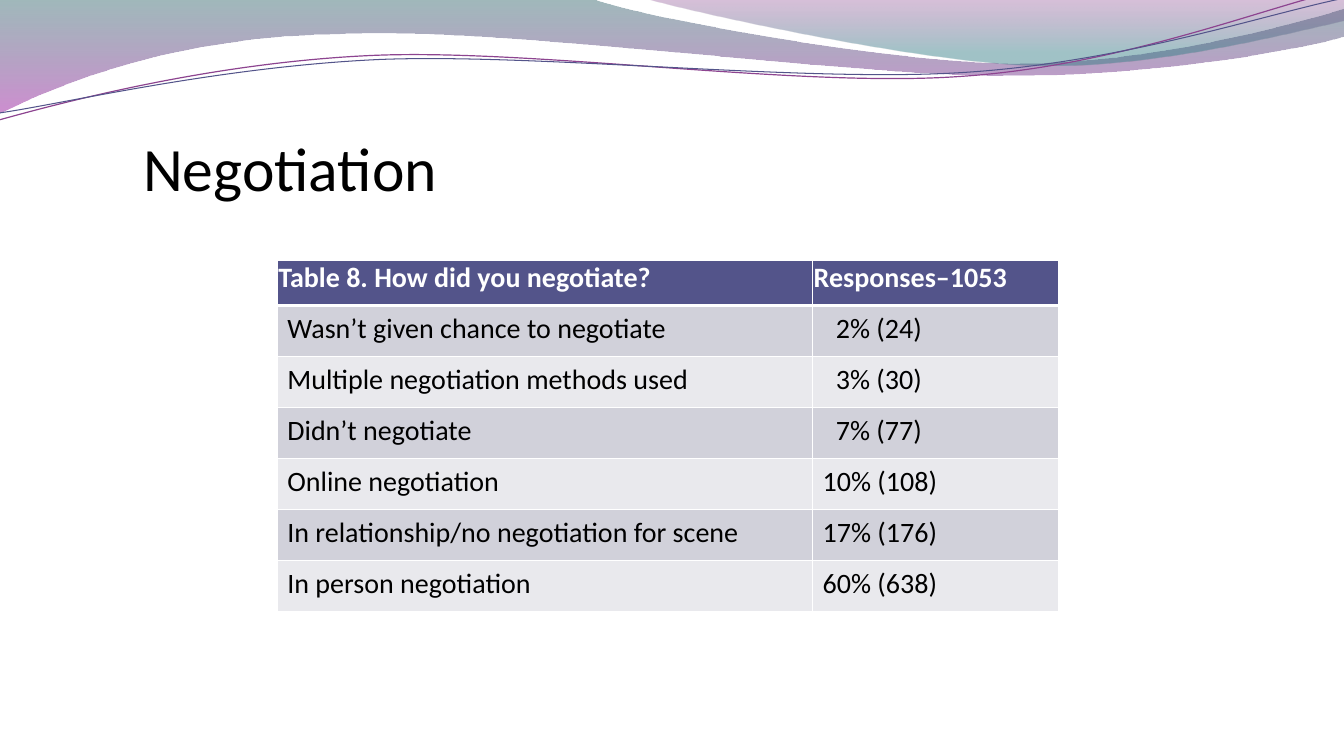
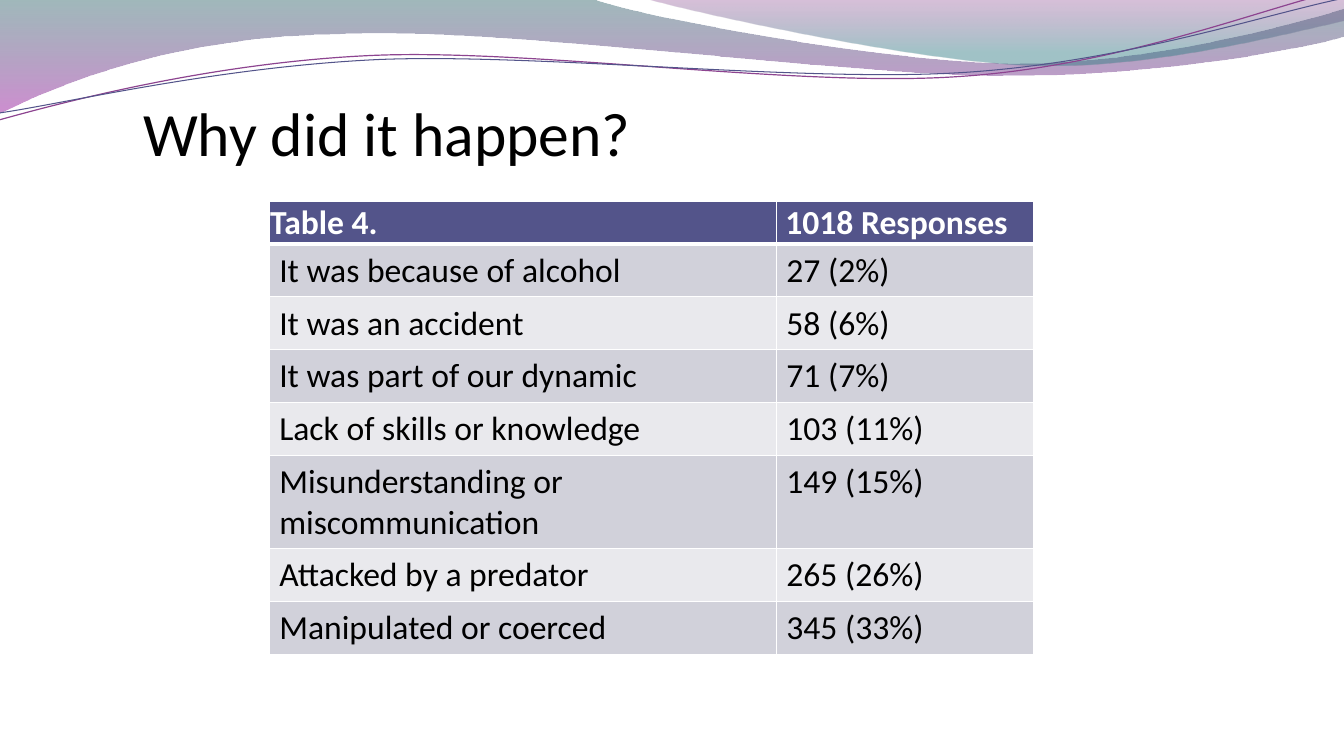
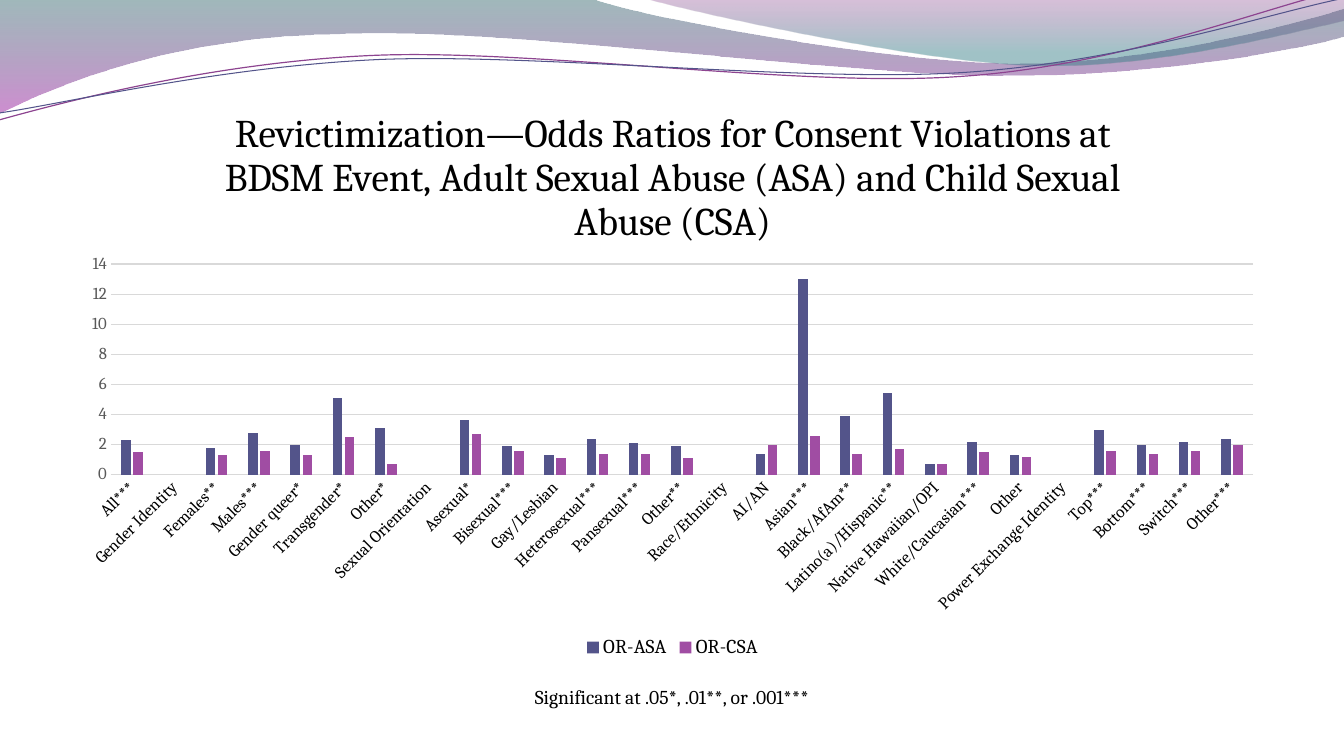
from lxml import etree
from pptx import Presentation
from pptx import util as u
from pptx.chart import data as chart_data
from pptx.dml import color
from pptx.enum import chart as ch
from pptx.enum import text
from pptx.oxml import ns, parse_xml

# Shared look
INDIGO, PURPLE, BLACK, WHITE = "53548A", "A04DA3", "000000", "FFFFFF"
BANDS = ("D1D1DA", "E9E9ED")
GRID, AXIS_TEXT = "D9D9D9", "595959"
BODY, SERIF = "Calibri", "Cambria"
HEAD_INSETS = dict(margin_left=0.01, margin_top=0.01, margin_right=0.01, margin_bottom=0.01)
BODY_INSETS = dict(margin_left=0.1, margin_top=1 / 16, margin_right=0.21, margin_bottom=1 / 16)
TITLE_INSETS = dict(margin_left=0, margin_top=0.05, margin_right=0, margin_bottom=0)

# Wave outlines: a start point, then curves (six numbers) or straight lines (two)
WAVES = [
    dict(start=(0, 0), stops=[(0, "2D6368", 45), (100, "A530A9", 55)], parts=[
        (5.87, -0.01), (6.34, 0.17, 8.85, 0.63, 10.11, 0.63),
        (11.38, 0.63, 12.78, 0.26, 13.33, 0.09), (13.35, 0.36),
        (13.11, 0.44, 11.6, 0.76, 9.94, 0.75), (8.29, 0.75, 5.09, 0.28, 3.43, 0.34),
        (1.72, 0.36, 0.61, 0.83, -0.01, 1.13), (0, 0)]),
    dict(start=(6.39, -0.01), stops=[(0, "7F2F82", 30), (80, "2F7B82", 45)], parts=[
        (6.79, 0.11, 9.09, 0.62, 10.25, 0.65), (11.41, 0.69, 12.82, 0.32, 13.33, 0.21),
        (13.33, 0), (6.39, -0.01)]),
    dict(start=(-0.01, 1.19), line=("8D4490", 0.85), parts=[
        (0.64, 1.01, 2.11, 0.62, 3.69, 0.55), (5.27, 0.48, 7.9, 0.87, 9.5, 0.76),
        (11.1, 0.66, 12.52, 0.08, 13.31, -0.1)]),
    dict(start=(0, 1.12), line=(INDIGO, 0.75), parts=[
        (0.63, 1.03, 2.18, 0.66, 3.78, 0.59), (5.37, 0.53, 7.96, 0.82, 9.55, 0.72),
        (11.15, 0.62, 12.55, 0.14, 13.34, -0.02)]),
]

NEGOTIATION = [
    ("Table 8. How did you negotiate?", "Responses–1053"),
    ("Wasn’t given chance to negotiate", "2% (24)"),
    ("Multiple negotiation methods used", "3% (30)"),
    ("Didn’t negotiate", "7% (77)"),
    ("Online negotiation", "10% (108)"),
    ("In relationship/no negotiation for scene", "17% (176)"),
    ("In person negotiation", "60% (638)"),
]
REASONS = [
    ("Table 4.", "1018 Responses"),
    ("It was because of alcohol", "27 (2%)"),
    ("It was an accident", "58 (6%)"),
    ("It was part of our dynamic", "71 (7%)"),
    ("Lack of skills or knowledge", "103 (11%)"),
    ("Misunderstanding or miscommunication", "149 (15%)"),
    ("Attacked by a predator", "265 (26%)"),
    ("Manipulated or coerced", "345 (33%)"),
]
ODDS_TITLE = ("Revictimization—Odds Ratios for Consent Violations at BDSM Event, "
              "Adult Sexual Abuse (ASA) and Child Sexual Abuse (CSA)")
ODDS_RATIOS = [
    ("All***", 2.3, 1.5), ("Gender Identity", None, None), ("Females**", 1.8, 1.3),
    ("Males***", 2.8, 1.6), ("Gender queer*", 2, 1.3), ("Transgender*", 5.1, 2.5),
    ("Other*", 3.1, 0.7), ("Sexual Orientation", None, None), ("Asexual*", 3.6, 2.7),
    ("Bisexual***", 1.9, 1.6), ("Gay/Lesbian", 1.3, 1.1), ("Heterosexual***", 2.4, 1.4),
    ("Pansexual***", 2.1, 1.4), ("Other**", 1.9, 1.1), ("Race/Ethnicity", None, None),
    ("AI/AN", 1.4, 2), ("Asian***", 13, 2.6), ("Black/AfAm**", 3.9, 1.4),
    ("Latino(a)/Hispanic**", 5.4, 1.7), ("Native Hawaiian/OPI", 0.7, 0.7),
    ("White/Caucasian***", 2.2, 1.5), ("Other", 1.3, 1.2),
    ("Power Exchange Identity", None, None), ("Top***", 3, 1.6), ("Bottom***", 2, 1.4),
    ("Switch***", 2.2, 1.6), ("Other***", 2.4, 2),
]


def rgb(hex_code):
    return color.RGBColor.from_string(hex_code)


def set_all(target, values):
    for name, value in values.items():
        setattr(target, name, value)


def set_insets(target, insets):
    set_all(target, {side: u.Inches(size) for side, size in insets.items()})


def style_font(font, size, hex_code=BLACK, name=SERIF, bold=False):
    set_all(font, dict(size=u.Pt(size), name=name, bold=bold))
    font.color.rgb = rgb(hex_code)


def style_line(line, hex_code, width):
    line.color.rgb = rgb(hex_code)
    line.width = u.Pt(width)


# Wave band
def bend(ribbon, parts):
    """Turn the straight segments that have control points into curves."""
    for segment, part in zip(ribbon._element.findall(".//" + ns.qn("a:lnTo")), parts):
        if len(part) == 6:
            curve = etree.Element(ns.qn("a:cubicBezTo"))
            for x, y in zip(part[::2], part[1::2]):
                etree.SubElement(curve, ns.qn("a:pt"), x=str(u.Inches(x) - ribbon.left),
                                 y=str(u.Inches(y) - ribbon.top))
            segment.getparent().replace(segment, curve)


def gradient(stops):
    marks = "".join(
        f'<a:gs pos="{pos * 1000}"><a:srgbClr val="{hex_code}">'
        f'<a:alpha val="{opacity * 1000}"/></a:srgbClr></a:gs>'
        for pos, hex_code, opacity in stops)
    return parse_xml(f'<a:gradFill {ns.nsdecls("a")} rotWithShape="1"><a:gsLst>{marks}'
                     '</a:gsLst><a:lin ang="5400000" scaled="0"/></a:gradFill>')


def add_waves(slide):
    for wave in WAVES:
        builder = slide.shapes.build_freeform(*map(u.Inches, wave["start"]))
        builder.add_line_segments([tuple(map(u.Inches, part[-2:])) for part in wave["parts"]],
                                  close="stops" in wave)
        ribbon = builder.convert_to_shape()
        bend(ribbon, wave["parts"])
        ribbon.shadow.inherit = False
        ribbon.fill.background()
        if "stops" in wave:
            ribbon.line.fill.background()
            no_fill = ribbon._element.spPr.find(ns.qn("a:noFill"))
            ribbon._element.spPr.replace(no_fill, gradient(wave["stops"]))
        else:
            style_line(ribbon.line, *wave["line"])


# Text
def add_text(slide, box, words, size, name, insets=None, **frame_format):
    frame = slide.shapes.add_textbox(*map(u.Inches, box)).text_frame
    set_all(frame, dict(word_wrap=True, **frame_format))
    set_insets(frame, insets or {})
    paragraph = frame.paragraphs[0]
    run = paragraph.add_run()
    run.text = words
    style_font(run.font, size, name=name)
    return paragraph


def add_title(slide, box, words):
    add_text(slide, box, words, 44, BODY, TITLE_INSETS,
             vertical_anchor=text.MSO_ANCHOR.BOTTOM)


# Tables
def add_borders(cell, **widths):
    properties = cell._tc.get_or_add_tcPr()
    for place, side in enumerate("LRTB"):
        line = etree.Element(ns.qn(f"a:ln{side}"), w=str(u.Pt(widths.get(side, 1))))
        fill = etree.SubElement(line, ns.qn("a:solidFill"))
        etree.SubElement(fill, ns.qn("a:srgbClr"), val=WHITE)
        properties.insert(place, line)


def add_survey_table(slide, corner, widths, total, head_height, rows, size, head_indent=0):
    body_height = (total - head_height) / (len(rows) - 1)
    table = slide.shapes.add_table(len(rows), len(widths), *map(
        u.Inches, (*corner, sum(widths), total))).table
    for column, width in zip(table.columns, widths):
        column.width = u.Inches(width)
    for r, row in enumerate(rows):
        head = r == 0
        table.rows[r].height = u.Inches(head_height if head else body_height)
        for c, words in enumerate(row):
            cell = table.cell(r, c)
            insets = dict(HEAD_INSETS if head else BODY_INSETS)
            if head and c == 1:
                insets["margin_left"] += head_indent
            elif words[1] == "%":  # line up one-digit shares with the others
                insets["margin_left"] += 0.13
            set_insets(cell, insets)
            cell.fill.solid()
            cell.fill.fore_color.rgb = rgb(INDIGO if head else BANDS[(r - 1) % 2])
            add_borders(cell, **({"B": 3} if head else {"T": 3} if r == 1 else {}))
            run = cell.text_frame.paragraphs[0].add_run()
            run.text = words
            style_font(run.font, size, WHITE if head else BLACK, BODY, head)


# Chart
def place_plot(chart, box, plot_box):
    """Fix the inner plot area; both boxes are in slide inches."""
    left, top, width, height = box
    x, y, w, h = plot_box
    shares = dict(x=(x - left) / width, y=(y - top) / height, w=w / width, h=h / height)
    area = chart._chartSpace.find(".//" + ns.qn("c:plotArea"))
    for old in area.findall(ns.qn("c:layout")):
        area.remove(old)
    marks = '<c:layoutTarget val="inner"/><c:xMode val="edge"/><c:yMode val="edge"/>'
    marks += "".join(f'<c:{key} val="{share:.4f}"/>' for key, share in shares.items())
    area.insert(0, parse_xml(f'<c:layout {ns.nsdecls("c")}><c:manualLayout>{marks}'
                             '</c:manualLayout></c:layout>'))


def add_odds_chart(slide, box, plot_box):
    names, asa, csa = zip(*ODDS_RATIOS)
    odds = chart_data.CategoryChartData()
    odds.categories = names
    odds.add_series("OR-ASA", asa)
    odds.add_series("OR-CSA", csa)
    chart = slide.shapes.add_chart(
        ch.XL_CHART_TYPE.COLUMN_CLUSTERED, *map(u.Inches, box), odds).chart
    style_font(chart.font, 10)
    place_plot(chart, box, plot_box)

    heading = chart.chart_title.text_frame.paragraphs[0]
    style_font(heading.font, 28)
    heading_run = heading.add_run()
    heading_run.text = ODDS_TITLE
    style_font(heading_run.font, 28)
    chart.chart_title.include_in_layout = False

    chart.has_legend = True
    set_all(chart.legend, dict(position=ch.XL_LEGEND_POSITION.BOTTOM, include_in_layout=False))
    style_font(chart.legend.font, 14)

    groups, ratios = chart.category_axis, chart.value_axis
    for axis, hex_code in ((groups, BLACK), (ratios, AXIS_TEXT)):
        set_all(axis, dict(major_tick_mark=ch.XL_TICK_MARK.NONE,
                           minor_tick_mark=ch.XL_TICK_MARK.NONE))
        style_font(axis.tick_labels.font, 12, hex_code)
        # automatic label angle
        axis._element.find(".//" + ns.qn("a:bodyPr")).set("rot", "-60000000")
    style_line(groups.format.line, GRID, 0.75)
    set_all(ratios, dict(minimum_scale=0, maximum_scale=14, major_unit=2))
    ratios.format.line.fill.background()
    style_line(ratios.major_gridlines.format.line, GRID, 0.75)

    plot = chart.plots[0]
    set_all(plot, dict(gap_width=219, overlap=-27, vary_by_categories=False))
    for series, hex_code in zip(plot.series, (INDIGO, PURPLE)):
        series.invert_if_negative = False
        series.format.fill.solid()
        series.format.fill.fore_color.rgb = rgb(hex_code)


# Slides
def new_slide(deck):
    slide = deck.slides.add_slide(deck.slide_layouts[6])
    add_waves(slide)
    return slide


def main():
    deck = Presentation()
    set_all(deck, dict(slide_width=u.Inches(13.33), slide_height=u.Inches(7.5)))

    negotiation = new_slide(deck)
    add_title(negotiation, (1.42, 0.77, 10.67, 1.25), "Negotiation")
    add_survey_table(negotiation, (2.75, 2.58), (5.31, 2.44), 3.49, 0.45, NEGOTIATION, 20)

    reasons = new_slide(deck)
    add_survey_table(reasons, (2.67, 2), (5.03, 2.55), 3.28, 0.41, REASONS, 24,
                     head_indent=0.08)
    add_title(reasons, (1.42, 0.77, 10.67, 0.9), "Why did it happen?")

    revictimization = new_slide(deck)
    add_odds_chart(revictimization, (0.67, 0.83, 12, 5.75), (1.1, 2.62, 11.33, 2.09))
    note = add_text(revictimization, (3.08, 6.75, 7.17, 0.34),
                    "Significant at .05*, .01**, or .001***", 14, SERIF)
    note.alignment = text.PP_ALIGN.CENTER

    deck.save("out.pptx")


if __name__ == "__main__":
    main()
